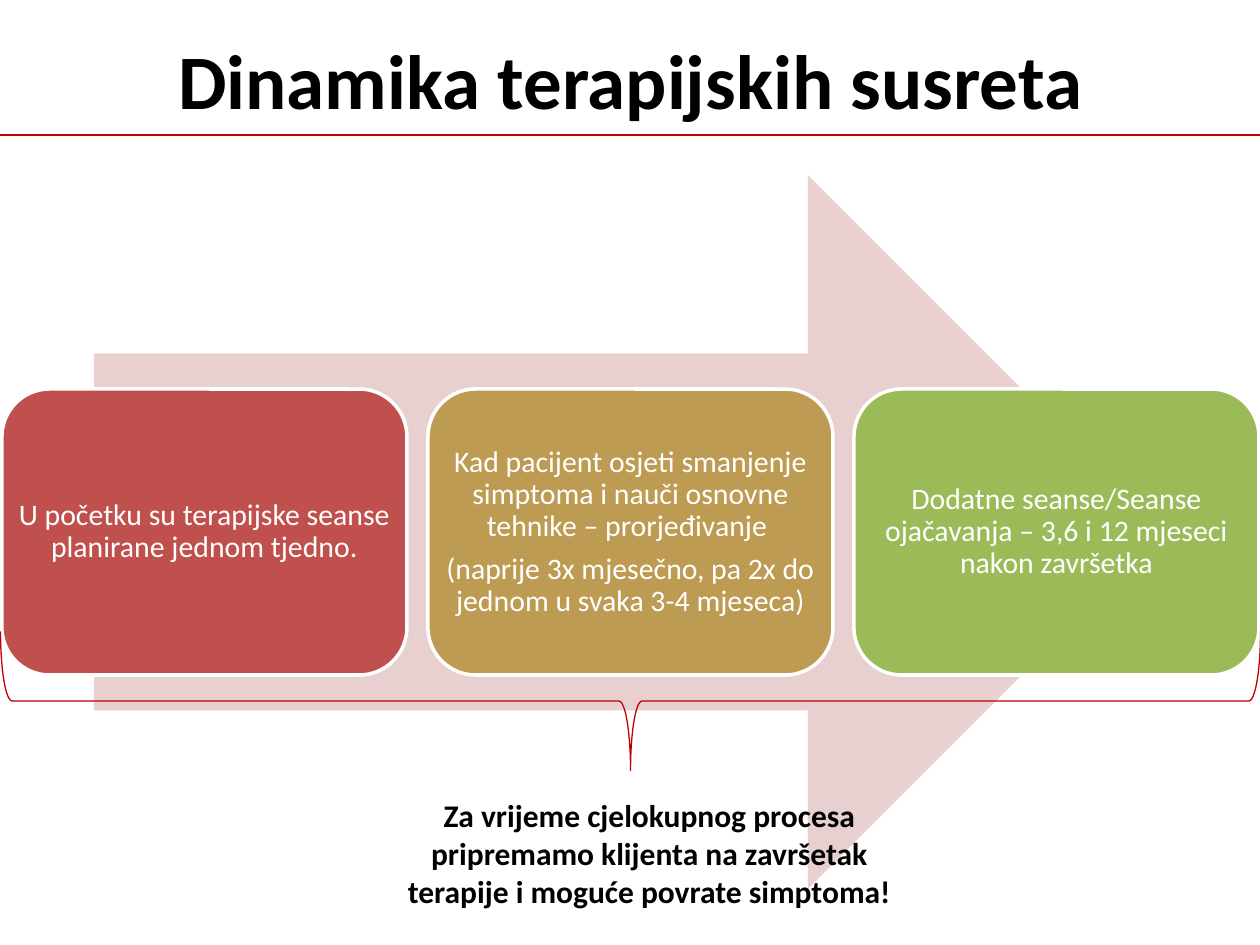
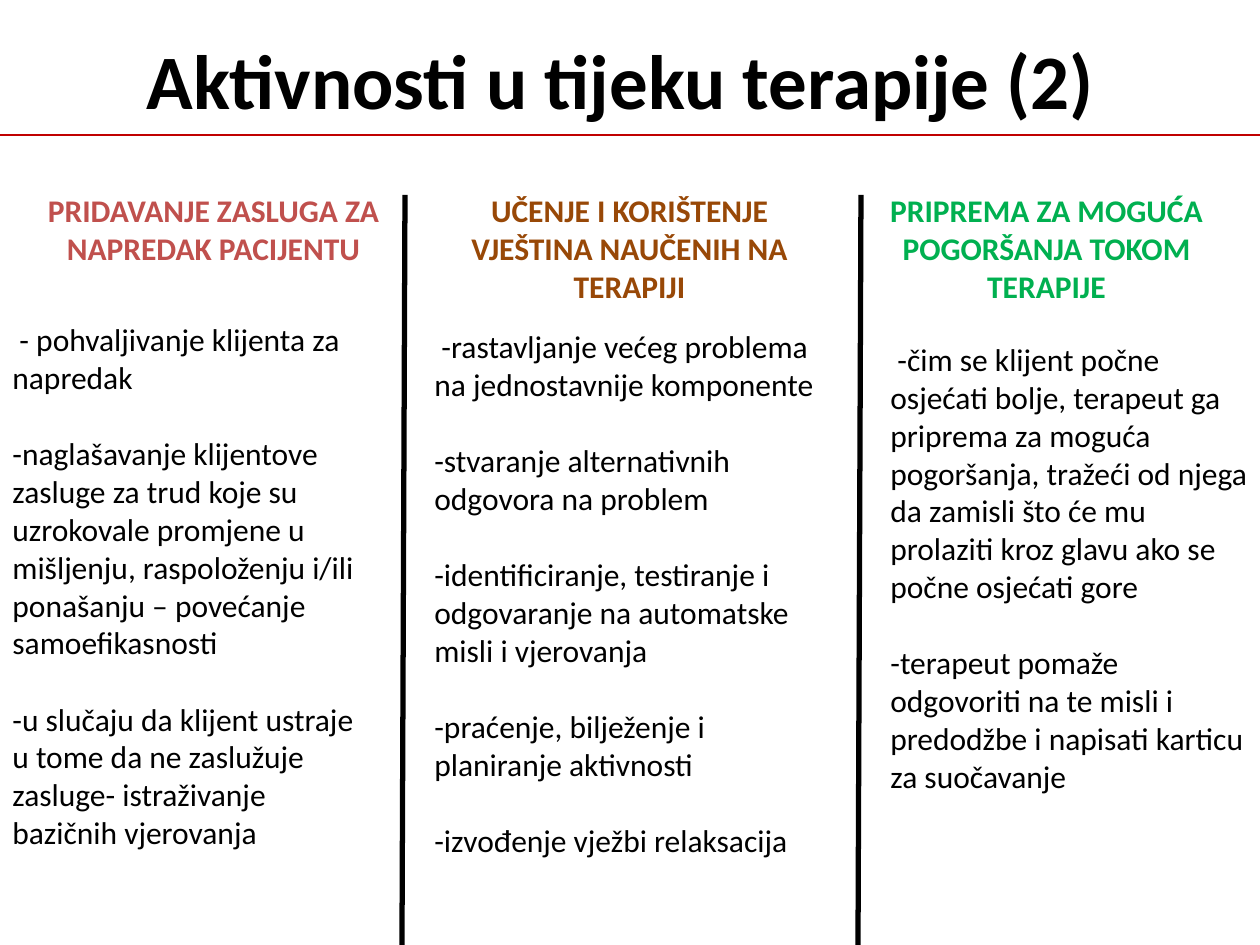
"""Build two slides on the course of therapy: session dynamics and activities."""
from dataclasses import dataclass

from lxml import etree
from pptx import Presentation
from pptx import util as u
from pptx.dml.color import RGBColor
from pptx.enum import shapes, text
from pptx.oxml.ns import qn


@dataclass(frozen=True)
class Theme:
    font: str = "Calibri"
    black: str = "000000"
    white: str = "FFFFFF"
    rule: str = "C00000"
    arrow: str = "E8D0D0"
    red: str = "C0504D"
    gold: str = "BD9B53"
    green: str = "9BBB59"
    brown: str = "984807"
    emerald: str = "00B050"
    title: int = 44
    body: int = 18
    step: int = 17


T = Theme()
PX = 914400 / 126
W, H = 1260, 945
CENTER, LEFT = text.PP_ALIGN.CENTER, text.PP_ALIGN.LEFT


def write(sp, lines, size=T.body, color=T.black, bold=False, align=CENTER, gap=0, spacing=1.0):
    tf = sp.text_frame
    tf.word_wrap = True
    tf.text = "\n".join(lines)
    for p in tf.paragraphs:
        p.alignment, p.line_spacing, p.space_after = align, spacing, u.Pt(gap)
        p.font.name, p.font.size, p.font.bold = T.font, u.Pt(size), bold
        p.font.color.rgb = RGBColor.from_string(color)
    return tf


def add_line(s, ends, color, width):
    line = s.shapes.add_connector(shapes.MSO_CONNECTOR.STRAIGHT, *[round(v * PX) for v in ends])
    line.line.color.rgb = RGBColor.from_string(color)
    line.line.width = u.Pt(width)
    etree.SubElement(line._element.spPr, qn("a:effectLst"))


prs = Presentation()
prs.slide_width, prs.slide_height = round(W * PX), round(H * PX)

slides = []
for title, left in (("Dinamika terapijskih susreta", 64), ("Aktivnosti u tijeku terapije (2)", 54)):
    s = prs.slides.add_slide(prs.slide_layouts[6])
    box = s.shapes.add_textbox(*[round(v * PX) for v in (left, 0, 1134, 158)])
    tf = write(box, [title], T.title, bold=True)
    tf.vertical_anchor = text.MSO_ANCHOR.MIDDLE
    add_line(s, (0, 135, W, 135), T.rule, 1.25)
    slides.append(s)
dynamics, activities = slides

arrow = dynamics.shapes.add_shape(
    shapes.MSO_SHAPE.RIGHT_ARROW, *[round(v * PX) for v in (94, 175, 1071, 714)])
arrow.shadow.inherit = False
arrow.fill.solid()
arrow.fill.fore_color.rgb = RGBColor.from_string(T.arrow)
arrow.line.fill.background()

steps = (
    (T.red, ["U početku su terapijske seanse planirane jednom tjedno."]),
    (T.gold, ["Kad pacijent osjeti smanjenje simptoma i nauči osnovne tehnike – prorjeđivanje ",
              "(naprije 3x mjesečno, pa 2x do jednom u svaka 3-4 mjeseca)"]),
    (T.green, ["Dodatne seanse/Seanse ojačavanja – 3,6 i 12 mjeseci nakon završetka"]),
)
for i, (color, lines) in enumerate(steps):
    sp = dynamics.shapes.add_shape(
        shapes.MSO_SHAPE.ROUNDED_RECTANGLE, *[round(v * PX) for v in (2 + 426 * i, 389, 405, 286)])
    sp.shadow.inherit = False
    sp.fill.solid()
    sp.fill.fore_color.rgb = RGBColor.from_string(color)
    sp.line.color.rgb = RGBColor.from_string(T.white)
    sp.line.width = u.Pt(2)
    tf = write(sp, lines, T.step, T.white, gap=6, spacing=0.9)
    tf.vertical_anchor = text.MSO_ANCHOR.MIDDLE
    tf.margin_left = tf.margin_right = 0

brace = dynamics.shapes.add_shape(
    shapes.MSO_SHAPE.RIGHT_BRACE, *[round(v * PX) for v in (561, 71, 139, W)])
brace.rotation = 90
brace.shadow.inherit = False
brace.fill.background()
brace.line.color.rgb = RGBColor.from_string(T.rule)
brace.line.width = u.Pt(0.75)

box = dynamics.shapes.add_textbox(*[round(v * PX) for v in (392, 790, 515, 127)])
write(box, ["Za vrijeme cjelokupnog procesa pripremamo klijenta na završetak "
            "terapije i moguće povrate simptoma!"], bold=True)

for x in (405, 861):
    add_line(activities, (x, 195, x - 3, H), T.black, 3)

columns = (
    ("PRIDAVANJE ZASLUGA ZA NAPREDAK PACIJENTU", T.red, 35, (0, 314, 382, 547), [
        " - pohvaljivanje klijenta za napredak",
        "-naglašavanje klijentove zasluge za trud koje su uzrokovale promjene u mišljenju, "
        "raspoloženju i/ili ponašanju – povećanje samoefikasnosti",
        "-u slučaju da klijent ustraje u tome da ne zaslužuje zasluge- istraživanje "
        "bazičnih vjerovanja"]),
    ("UČENJE I KORIŠTENJE VJEŠTINA NAUČENIH NA TERAPIJI", T.brown, 451, (422, 321, 417, 585), [
        " -rastavljanje većeg problema na jednostavnije komponente",
        "-stvaranje alternativnih odgovora na problem",
        "-identificiranje, testiranje i odgovaranje na automatske misli i vjerovanja",
        "-praćenje, bilježenje i planiranje aktivnosti",
        "-izvođenje vježbi relaksacija"]),
    ("PRIPREMA ZA MOGUĆA POGORŠANJA TOKOM TERAPIJE", T.emerald, 868, (878, 334, 382, 471), [
        " -čim se klijent počne osjećati bolje, terapeut ga priprema za moguća pogoršanja, "
        "tražeći od njega da zamisli što će mu prolaziti kroz glavu ako se počne osjećati gore",
        "-terapeut pomaže odgovoriti na te misli i predodžbe i napisati karticu za suočavanje"]),
)
for heading, color, left, area, points in columns:
    box = activities.shapes.add_textbox(*[round(v * PX) for v in (left, 185, 357, 127)])
    write(box, [heading], color=color, bold=True)
    box = activities.shapes.add_textbox(*[round(v * PX) for v in area])
    write(box, points, align=LEFT, gap=22)

prs.save("out.pptx")
